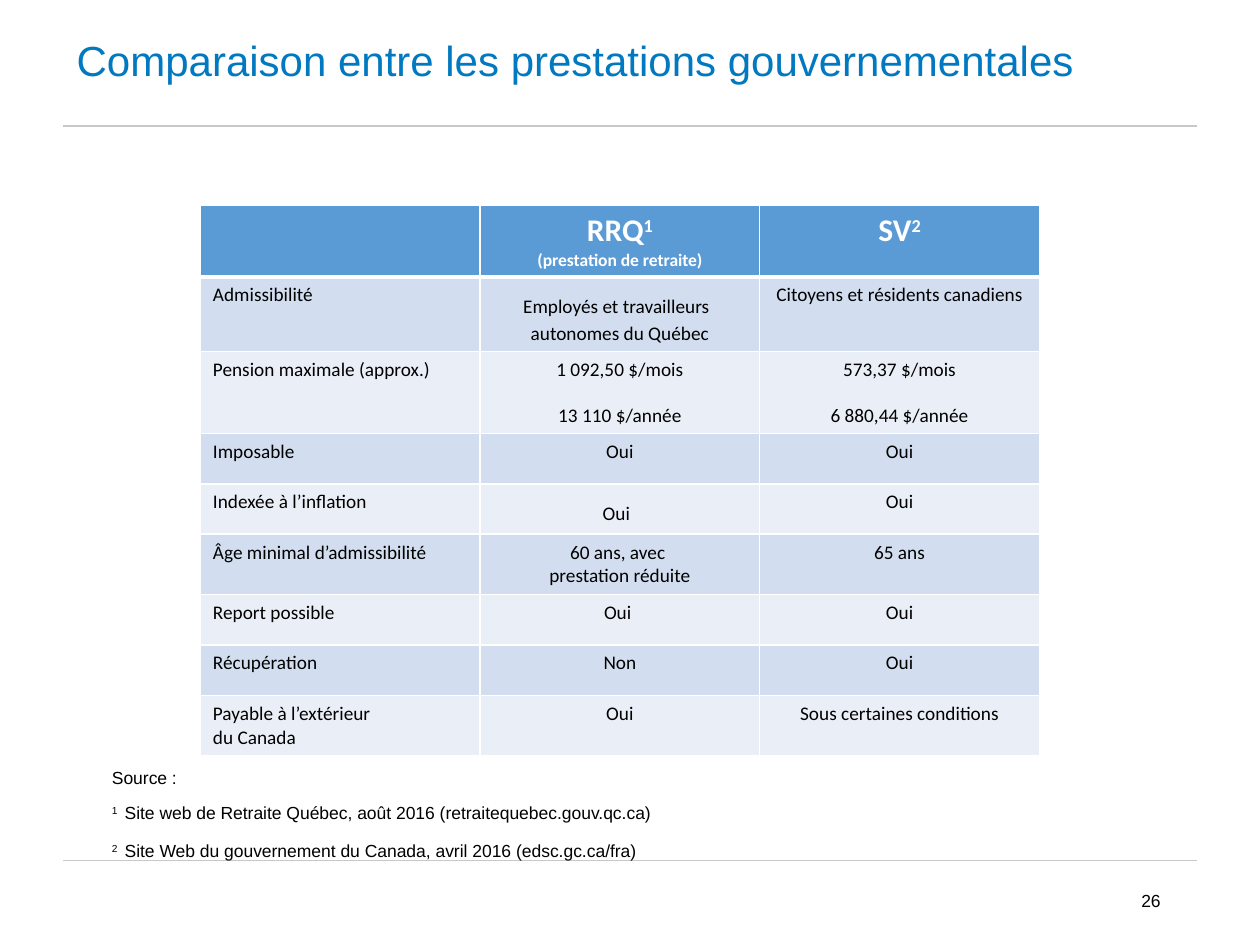
from typing import NamedTuple

from lxml.etree import SubElement
from pptx import Presentation
from pptx.dml.color import RGBColor
from pptx.enum.shapes import MSO_CONNECTOR
from pptx.enum.text import MSO_ANCHOR, PP_ALIGN
from pptx.oxml.ns import qn
from pptx.util import Inches, Pt

BLUE = RGBColor(0x00, 0x79, 0xC1)
HEAD = RGBColor(0x5B, 0x9B, 0xD5)
BANDS = (RGBColor(0xD2, 0xDE, 0xEF), RGBColor(0xEA, 0xEF, 0xF7))
GRAY = RGBColor(0xC8, 0xC8, 0xC8)
WHITE = RGBColor(0xFF, 0xFF, 0xFF)
BLACK = RGBColor(0x00, 0x00, 0x00)


class Part(NamedTuple):
    """A run of text with its look."""
    text: str
    size: float = 11
    color: RGBColor = BLACK
    bold: bool = False
    raised: bool = False
    face: str = "Calibri"


class Row(NamedTuple):
    height: float
    cells: tuple
    gap: float = 0


def head(text: str, size: float = 18, raised: bool = False) -> Part:
    return Part(text, size, WHITE, True, raised)


def plain(text: str, raised: bool = False) -> Part:
    return Part(text, 10, raised=raised, face="Arial")


WIDE = Part(" ", 18)
# Each cell is a list of paragraphs; each paragraph is a list of parts.
ROWS = [
    Row(0.57, ([],
               [[head("RRQ"), head("1", raised=True)], [head("(prestation de retraite)", 10)]],
               [[head("SV"), head("2", raised=True)]])),
    Row(0.59, ("Admissibilité",
               [[Part("Employés et travailleurs"), WIDE], [Part("autonomes du Québec")]],
               "Citoyens et résidents canadiens")),
    Row(0.65, ("Pension maximale (approx.)",
               [[Part("1 092,50 $/mois")], [Part("13 110 $/année")]],
               [[Part("573,37 $/mois")], [Part("6 880,44 $/année")]]), 13),
    Row(0.4, ("Imposable", "Oui", "Oui")),
    Row(0.4, ("Indexée à l’inflation", [[Part("Oui"), WIDE]], "Oui")),
    Row(0.48, ("Âge minimal d’admissibilité", "60 ans, avec \nprestation réduite", "65 ans")),
    Row(0.4, ("Report possible", "Oui ", "Oui")),
    Row(0.4, ("Récupération", "Non", "Oui")),
    Row(0.48, ("Payable à l’extérieur \ndu Canada", "Oui", "Sous certaines conditions")),
]
NOTES = [
    [plain("Source :")],
    [plain("1", True), WIDE,
     plain("Site web de Retraite Québec, août 2016 (retraitequebec.gouv.qc.ca)")],
    [plain("2", True), WIDE,
     plain("Site Web du gouvernement du Canada, avril 2016 (edsc.gc.ca/fra)")],
]


def write(frame, lines: list, align=PP_ALIGN.LEFT, gap: float = 0) -> None:
    """Fill a text frame; gap is the space before all but the first line."""
    for i, parts in enumerate(lines):
        para = frame.add_paragraph() if i else frame.paragraphs[0]
        para.text = parts[0].text
        for part in parts[1:]:
            para.add_run().text = part.text
        para.alignment = align
        if i and gap:
            para.space_before = Pt(gap)
        # A line break splits the text of one part into several runs.
        looks = parts if len(parts) > 1 else parts * len(para.runs)
        for run, part in zip(para.runs, looks):
            font = run.font
            font.name, font.size, font.bold = part.face, Pt(part.size), part.bold
            font.color.rgb = part.color
            if part.raised:
                run._r.get_or_add_rPr().set("baseline", "30000")


def add_text(slide, box: tuple, lines: list, align=PP_ALIGN.LEFT, anchor=MSO_ANCHOR.MIDDLE):
    frame = slide.shapes.add_textbox(*map(Inches, box)).text_frame
    frame.word_wrap = True
    frame.vertical_anchor = anchor
    write(frame, lines, align)
    return frame


def add_rule(slide, y: float) -> None:
    line = slide.shapes.add_connector(
        MSO_CONNECTOR.STRAIGHT, Inches(0.5), Inches(y), Inches(9.5), Inches(y))
    line.line.color.rgb = GRAY
    line.line.width = Pt(0.75)
    SubElement(line._element.spPr, qn("a:effectLst"))


def edge(cell, low: float, top: float) -> None:
    """Draw white cell borders; low and top are widths in points."""
    props = cell._tc.get_or_add_tcPr()
    for side, width in (("L", 1), ("R", 1), ("T", top), ("B", low)):
        line = SubElement(props, qn(f"a:ln{side}"), w=str(Pt(width)))
        fill = SubElement(line, qn("a:solidFill"))
        SubElement(fill, qn("a:srgbClr"), val=str(WHITE))


def add_grid(slide) -> None:
    height = sum(row.height for row in ROWS)
    grid = slide.shapes.add_table(
        len(ROWS), 3, Inches(1.59), Inches(1.63), Inches(6.66), Inches(height)).table
    for i, row in enumerate(ROWS):
        grid.rows[i].height = Inches(row.height)
        for j, text in enumerate(row.cells):
            cell = grid.cell(i, j)
            edge(cell, 1 if i else 3, 3 if i == 1 else 1)
            cell.fill.solid()
            cell.fill.fore_color.rgb = BANDS[(i - 1) % 2] if i else HEAD
            lines = [[Part(text)]] if isinstance(text, str) else text
            write(cell.text_frame, lines, PP_ALIGN.CENTER if j else PP_ALIGN.LEFT, row.gap)


def main() -> None:
    deck = Presentation()
    deck.slide_width, deck.slide_height = Inches(10), Inches(7.5)
    slide = deck.slides.add_slide(deck.slide_layouts[6])
    for y in (6.83, 1):
        add_rule(slide, y)
    title = Part("Comparaison entre les prestations gouvernementales", 24, BLUE, face="Arial")
    frame = add_text(slide, (0.51, 0, 9, 1), [[title]])
    frame.paragraphs[0].line_spacing = 0.9
    add_text(slide, (7.06, 6.95, 2.25, 0.4), [[plain("26")]], PP_ALIGN.RIGHT)
    add_grid(slide)
    add_text(slide, (0.79, 6.04, 7.84, 1.18), NOTES, anchor=MSO_ANCHOR.TOP)
    deck.save("out.pptx")


if __name__ == "__main__":
    main()
